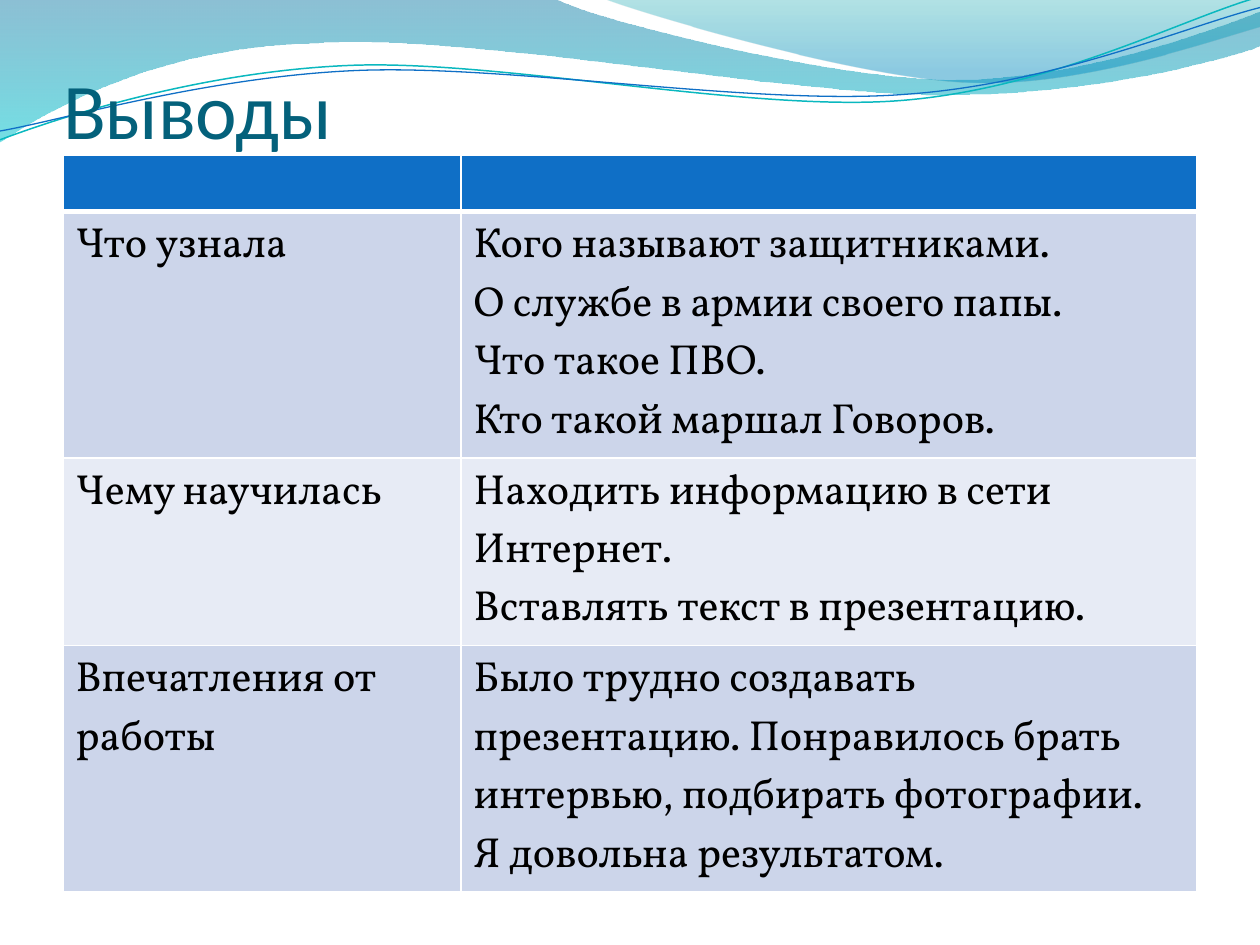
from lxml import etree
from pptx import Presentation
from pptx import util as u
from pptx.dml.color import RGBColor
from pptx.enum import text
from pptx.oxml import ns


def color(hex_value):
    return RGBColor.from_string(hex_value)


class SlideBuilder:
    title_font, body_font = "Calibri", "Vollkorn"
    title_color, body_color = "04617B", "000000"
    header_fill, band_fills = "0F6FC6", ("CCD5EA", "E7EBF5")
    border_color = "FFFFFF"

    def __init__(self, presentation):
        self.slide = presentation.slides.add_slide(presentation.slide_layouts[5])

    def freeform(self, start, segments, close):
        """A segment of two numbers is a line, one of six a cubic curve."""
        points = [segment[i:i + 2] for segment in segments
                  for i in range(0, len(segment), 2)]
        builder = self.slide.shapes.build_freeform(
            u.Inches(start[0]), u.Inches(start[1]), scale=1.0)
        builder.add_line_segments(
            [(u.Inches(x), u.Inches(y)) for x, y in points], close=close)
        shape = builder.convert_to_shape()
        shape.shadow.inherit = False
        # Join the three points of each curve into one element
        steps = iter(list(shape.element.iter(ns.qn("a:lnTo"))))
        for segment in segments:
            group = [next(steps) for _ in range(len(segment) // 2)]
            if len(group) == 3:
                curve = etree.Element(ns.qn("a:cubicBezTo"))
                group[0].addprevious(curve)
                for step in group:
                    curve.append(step[0])
                    step.getparent().remove(step)
        return shape

    def band(self, start, segments, stops):
        shape = self.freeform(start, segments, True)
        shape.line.fill.background()
        shape.fill.gradient()
        shape.fill.gradient_angle = 270
        for stop, (position, hex_value, _) in zip(shape.fill.gradient_stops, stops):
            stop.position = position
            stop.color.rgb = color(hex_value)
        # Transparency of the gradient stops
        tints = shape.element.spPr.findall(".//" + ns.qn("a:gs") + "/" + ns.qn("a:srgbClr"))
        for tint, (_, _, opacity) in zip(tints, stops):
            etree.SubElement(tint, ns.qn("a:alpha"), val=str(opacity * 1000))

    def wave(self, start, segments, hex_value, width):
        shape = self.freeform(start, segments, False)
        shape.fill.background()
        shape.line.color.rgb = color(hex_value)
        shape.line.width = u.Pt(width)

    def title(self, words, left, top, width, height):
        title = self.slide.shapes.title
        title.left, title.top = u.Inches(left), u.Inches(top)
        title.width, title.height = u.Inches(width), u.Inches(height)
        frame = title.text_frame
        frame.text = words
        frame.word_wrap = True
        frame.auto_size = text.MSO_AUTO_SIZE.NONE
        frame.vertical_anchor = text.MSO_ANCHOR.BOTTOM
        frame.margin_left = frame.margin_right = frame.margin_bottom = 0
        frame.margin_top = u.Inches(0.05)
        paragraph = frame.paragraphs[0]
        paragraph.alignment = text.PP_ALIGN.LEFT
        self.set_font(paragraph, self.title_font, 45, self.title_color)
        # Bring the title in front of the waves
        self.slide.shapes.element.append(title.element)

    def set_font(self, paragraph, name, size, hex_value):
        paragraph.font.name = name
        paragraph.font.size = u.Pt(size)
        paragraph.font.color.rgb = color(hex_value)

    def borders(self, cell, bottom, top):
        properties = cell._tc.get_or_add_tcPr()
        for side, width in (("L", 1), ("R", 1), ("T", top), ("B", bottom)):
            line = etree.SubElement(properties, ns.qn("a:ln" + side), w=str(u.Pt(width)))
            fill = etree.SubElement(line, ns.qn("a:solidFill"))
            etree.SubElement(fill, ns.qn("a:srgbClr"), val=self.border_color)

    def table(self, rows, left, top, widths, heights):
        frame = self.slide.shapes.add_table(
            len(rows), len(widths), u.Inches(left), u.Inches(top),
            u.Inches(sum(widths)), u.Inches(sum(heights)))
        table = frame.table
        for column, width in zip(table.columns, widths):
            column.width = u.Inches(width)
        for r, (row, height) in enumerate(zip(rows, heights)):
            table.rows[r].height = u.Inches(height)
            fill = self.band_fills[(r - 1) % 2] if r else self.header_fill
            for c, words in enumerate(row):
                cell = table.cell(r, c)
                self.borders(cell, bottom=1 if r else 3, top=3 if r == 1 else 1)
                cell.fill.solid()
                cell.fill.fore_color.rgb = color(fill)
                if not words:
                    continue
                cell.text = words
                for paragraph in cell.text_frame.paragraphs:
                    self.set_font(paragraph, self.body_font, 24, self.body_color)


def main():
    presentation = Presentation()
    presentation.slide_width, presentation.slide_height = u.Inches(10), u.Inches(7.5)
    builder = SlideBuilder(presentation)

    # Coloured bands along the top
    builder.band((0, 0), [(4.4, -0.01),
                          (4.76, 0.17, 6.64, 0.63, 7.58, 0.63),
                          (8.53, 0.63, 9.58, 0.26, 10, 0.09),
                          (10.01, 0.36),
                          (9.83, 0.44, 8.7, 0.76, 7.46, 0.75),
                          (6.22, 0.75, 3.82, 0.28, 2.57, 0.34),
                          (1.29, 0.36, 0.46, 0.83, -0.01, 1.13)],
                 [(0, "0074A1", 45), (1, "00C6CF", 55)])
    builder.band((4.79, -0.01), [(5.09, 0.11, 6.82, 0.62, 7.69, 0.65),
                                 (8.56, 0.69, 9.61, 0.32, 10, 0.21),
                                 (10, 0)],
                 [(0, "00A1A9", 30), (0.8, "008BBF", 45)])

    # Thin wave lines
    builder.wave((0, 1.11), [(0.48, 0.93, 1.58, 0.57, 2.77, 0.52),
                             (3.95, 0.47, 5.93, 0.89, 7.13, 0.8),
                             (8.33, 0.71, 9.38, 0.15, 9.98, -0.02)], "0AB8BF", 0.85)
    builder.wave((0, 1.04), [(0.47, 0.96, 1.64, 0.61, 2.83, 0.56),
                             (4.03, 0.51, 5.97, 0.84, 7.17, 0.75),
                             (8.36, 0.67, 9.41, 0.21, 10, 0.06)], "0F6FC6", 0.75)

    # Title and table of conclusions
    builder.title("Выводы", 0.5, 0.77, 9, 0.46)
    builder.table([
        ("", ""),
        ("Что узнала", "Кого называют защитниками.\nО службе в армии своего папы.\n"
                       "Что такое ПВО.\nКто такой маршал Говоров."),
        ("Чему научилась", "Находить информацию в сети Интернет.\n"
                           "Вставлять текст в презентацию."),
        ("Впечатления от работы", "Было трудно создавать презентацию. Понравилось брать "
                                  "интервью, подбирать фотографии.\n"
                                  "Я довольна результатом."),
    ], 0.5, 1.23, widths=(3.16, 5.84), heights=(0.45, 1.95, 1.48, 1.95))

    presentation.save("out.pptx")


if __name__ == "__main__":
    main()
